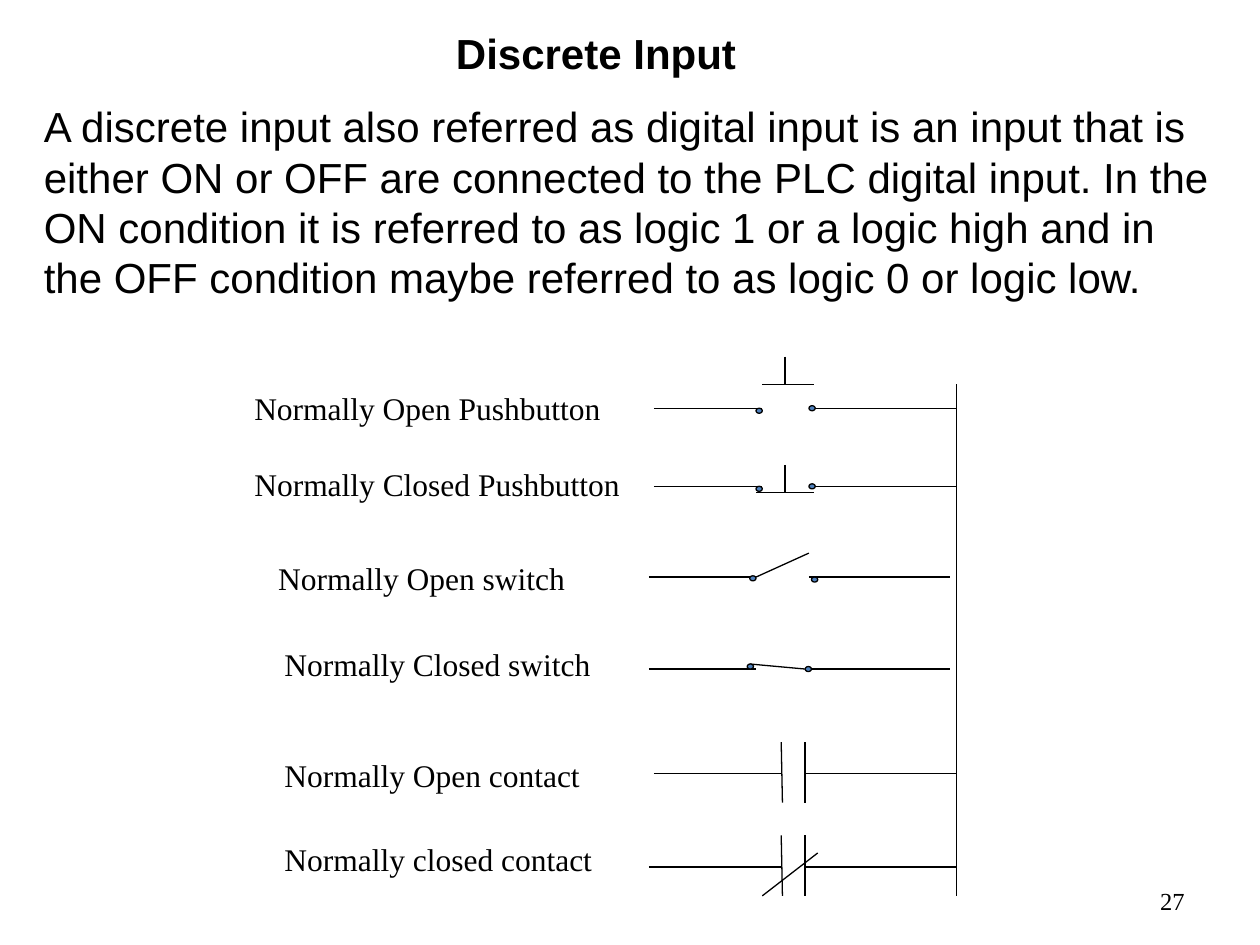
from dataclasses import dataclass

from lxml.etree import SubElement
from pptx import Presentation
from pptx.dml.color import RGBColor
from pptx.enum.shapes import MSO_CONNECTOR as Connector, MSO_SHAPE as Shape
from pptx.enum.text import MSO_ANCHOR as Anchor, PP_ALIGN as Align
from pptx.oxml.ns import qn
from pptx.util import Inches, Pt


@dataclass(frozen=True)
class Theme:
    ink: RGBColor = RGBColor(0, 0, 0)
    terminal: RGBColor = RGBColor(0x4F, 0x81, 0xBD)
    heading_font: str = "Arial"
    label_font: str = "Times New Roman"
    heading_size: int = 24
    label_size: int = 18
    number_size: int = 14
    stroke: float = 0.75


class SlideBuilder:
    """Draws themed text, wires and switch terminals on one slide."""

    def __init__(self, slide, theme):
        self.slide = slide
        self.theme = theme

    def text(self, words, area, font, size, bold=False, wrap=True,
             align=Align.LEFT, anchor=Anchor.TOP):
        box = self.slide.shapes.add_textbox(*map(Inches, area))
        frame = box.text_frame
        frame.word_wrap = wrap
        frame.vertical_anchor = anchor
        para = frame.paragraphs[0]
        para.text = words
        para.alignment = align
        para.font.name = font
        para.font.size = Pt(size)
        para.font.bold = bold
        para.font.color.rgb = self.theme.ink

    def label(self, words, left, top, width, wrap=False):
        self.text(words, (left, top, width, 0.4), self.theme.label_font,
                  self.theme.label_size, wrap=wrap)

    def wire(self, *ends):
        line = self.slide.shapes.add_connector(Connector.STRAIGHT, *map(Inches, ends))
        line.line.color.rgb = self.theme.ink
        line.line.width = Pt(self.theme.stroke)
        SubElement(line._element.spPr, qn("a:effectLst"))

    def terminal(self, left, top):
        dot = self.slide.shapes.add_shape(
            Shape.OVAL, *map(Inches, (left, top, 0.05, 0.04)))
        dot.shadow.inherit = False
        dot.fill.solid()
        dot.fill.fore_color.rgb = self.theme.terminal
        dot.line.color.rgb = self.theme.ink
        dot.line.width = Pt(self.theme.stroke)

    def rung(self, level, start, left_end, right_start, end):
        self.wire(start, level, left_end, level)
        self.wire(right_start, level, end, level)

    def pushbutton(self, level, bar_left, bar_level):
        self.rung(level, 5.19, 6.05, 6.46, RAIL)
        self.terminal(6, level)
        self.terminal(6.42, level - 0.02)
        self.wire(bar_left, bar_level, 6.46, bar_level)
        self.wire(6.23, bar_level - 0.22, 6.23, bar_level)

    def switch(self, level, blade, terminals):
        self.rung(level, 5.15, 6, 6.42, 7.54)
        self.wire(*blade)
        for spot in terminals:
            self.terminal(*spot)

    def contact(self, level, start):
        self.rung(level, start, 6.2, 6.39, RAIL)
        self.wire(6.2, level - 0.25, 6.21, level + 0.23)
        self.wire(6.39, level - 0.25, 6.39, level + 0.23)


RAIL = 7.59
LABELS = [
    ("Normally Open Pushbutton", 1.92, 3.04, 3.23, True),
    ("Normally Closed Pushbutton", 1.92, 3.64, 3.39, True),
    ("Normally Open switch", 2.11, 4.39, 2.5),
    ("Normally Closed switch", 2.16, 5.07, 2.66),
    ("Normally Open contact", 2.16, 5.95, 2.57),
    ("Normally closed contact", 2.16, 6.62, 2.67),
]
DEFINITION = (
    "A discrete input also referred as digital input is an input that is either "
    "ON or OFF are connected to the PLC digital input. In the ON condition it is "
    "referred to as logic 1 or a logic high and in the OFF condition maybe "
    "referred to as logic 0 or logic low."
)


def main():
    deck = Presentation()
    deck.slide_width, deck.slide_height = Inches(10), Inches(7.5)
    theme = Theme()
    page = SlideBuilder(deck.slides.add_slide(deck.slide_layouts[6]), theme)

    page.text("27", (7.17, 6.95, 2.33, 0.4), theme.label_font, theme.number_size,
              align=Align.RIGHT, anchor=Anchor.MIDDLE)
    page.text("Discrete Input", (3.52, 0.17, 2.45, 0.5), theme.heading_font,
              theme.heading_size, bold=True, wrap=False)
    page.text(DEFINITION, (0.25, 0.75, 9.46, 1.72), theme.heading_font,
              theme.heading_size)

    page.wire(RAIL, 3.05, RAIL, 7.11)
    page.pushbutton(3.24, bar_left=6.05, bar_level=3.05)
    page.pushbutton(3.86, bar_left=6, bar_level=3.91)
    page.switch(4.58, (6, 4.58, 6.42, 4.39), [(5.95, 4.57), (6.44, 4.58)])
    page.switch(5.31, (5.95, 5.27, 6.39, 5.31), [(5.93, 5.27), (6.39, 5.29)])
    page.contact(6.14, start=5.19)
    page.contact(6.88, start=5.15)
    page.wire(6.05, 7.11, 6.49, 6.77)

    for label in LABELS:
        page.label(*label)

    deck.save("out.pptx")


if __name__ == "__main__":
    main()
